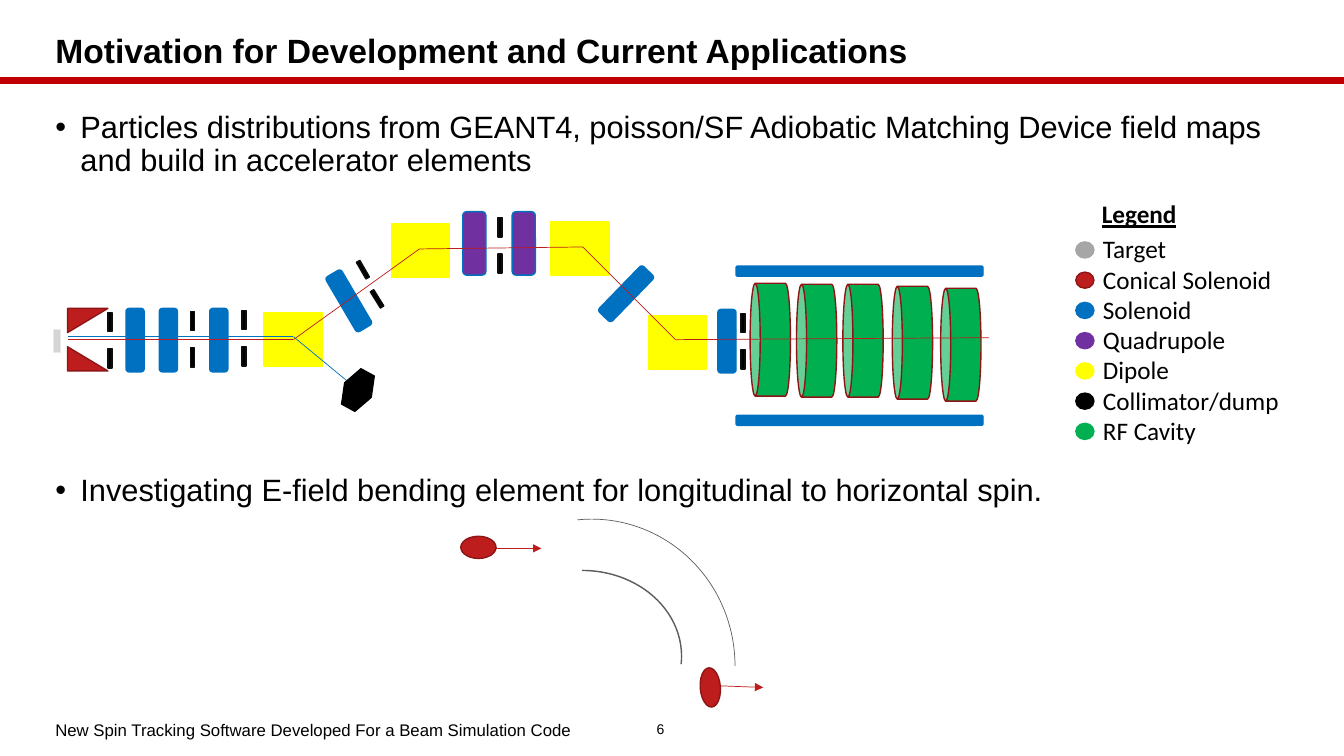
import pptx
import pptx.util
import pptx.oxml
import pptx.oxml.ns
from pptx.dml.color import RGBColor
from pptx.enum.shapes import MSO_CONNECTOR, MSO_SHAPE
from pptx.enum.text import MSO_ANCHOR, PP_ALIGN
from pptx.util import Inches

BLACK = RGBColor(0, 0, 0)
INK = RGBColor(0x0D, 0x0D, 0x0D)
WHITE = RGBColor(255, 255, 255)
RULE = RGBColor(0xC0, 0, 0)
RED = RGBColor(0xBE, 0x1D, 0x1D)
DARK = RGBColor(0x8D, 0x15, 0x15)
BLUE = RGBColor(0, 0x70, 0xC0)
PURPLE = RGBColor(0x70, 0x30, 0xA0)
YELLOW = RGBColor(255, 255, 0)
GREEN = RGBColor(0, 0xB0, 0x50)
GRAY = RGBColor(0xA6, 0xA6, 0xA6)
PALE = RGBColor(0xD5, 0xD5, 0xD5)
MIST = RGBColor(0xEA, 0xEA, 0xEA)
EDGE = RGBColor(0x5E, 0x5E, 0x5E)

TITLE = {"name": "Arial", "size": pptx.util.Pt(24), "bold": True}
BODY = {"name": "Arial", "size": pptx.util.Pt(22)}
FOOT = {"name": "Arial", "size": pptx.util.Pt(12)}
PAGE = {"name": "Arial", "size": pptx.util.Pt(10)}
KEY = {"name": "Calibri", "size": pptx.util.Pt(18)}
HEAD = {**KEY, "bold": True, "underline": True}

LEGEND = [
    ("Target", GRAY, GRAY),
    ("Conical Solenoid", RED, DARK),
    ("Solenoid", BLUE, BLUE),
    ("Quadrupole", PURPLE, PURPLE),
    ("Dipole", YELLOW, YELLOW),
    ("Collimator/dump", BLACK, BLACK),
    ("RF Cavity", GREEN, GREEN),
]


def tag(parent, name, **attrs):
    node = pptx.oxml.parse_xml(
        f'<a:{name} {pptx.oxml.ns.nsdecls("a")}/>')
    for key, value in attrs.items():
        node.set(key, value)
    parent.append(node)


def fill_text(frame, lines, form, anchor=MSO_ANCHOR.TOP,
              align=PP_ALIGN.LEFT, space=1.0, bullet=False):
    frame.word_wrap = True
    frame.vertical_anchor = anchor
    for i, line in enumerate(lines):
        para = frame.add_paragraph() if i else frame.paragraphs[0]
        para.alignment = align
        para.line_spacing = space
        if bullet:
            props = para._p.get_or_add_pPr()
            props.set("marL", str(Inches(0.25)))
            props.set("indent", str(Inches(-0.25)))
            tag(props, "buFont", typeface="Arial")
            tag(props, "buChar", char="•")
        run = para.add_run()
        run.text = line
        for key, value in form.items():
            setattr(run.font, key, value)
        run.font.color.rgb = BLACK


def text(slide, box, lines, form, **opts):
    shape = slide.shapes.add_textbox(*map(Inches, box))
    fill_text(shape.text_frame, lines, form, **opts)


def shape(slide, kind, box, fill, edge, turn=0, width=1, adjust=()):
    item = slide.shapes.add_shape(kind, *map(Inches, box))
    item.shadow.inherit = False
    item.rotation = turn
    if fill is None:
        item.fill.background()
    else:
        item.fill.solid()
        item.fill.fore_color.rgb = fill
    item.line.color.rgb = edge
    item.line.width = pptx.util.Pt(width)
    for i, value in enumerate(adjust):
        item.adjustments[i] = value


def line(slide, ends, color, width=0.5, arrow=False):
    item = slide.shapes.add_connector(
        MSO_CONNECTOR.STRAIGHT, *map(Inches, ends))
    item.line.color.rgb = color
    item.line.width = pptx.util.Pt(width)
    if arrow:
        tag(item.line._get_or_add_ln(), "tailEnd", type="triangle")
    tag(item._element.spPr, "effectLst")


def magnet(slide, x, y, fill=BLUE, wide=0.18, turn=0):
    shape(slide, MSO_SHAPE.ROUNDED_RECTANGLE, (x, y, wide, 0.63),
          fill, BLUE, turn)


def slit(slide, x, y, turn=0):
    shape(slide, MSO_SHAPE.RECTANGLE, (x, y, 0.04, 0.19), BLACK, INK, turn)


def beamline(slide):
    # Target and conical solenoid; the upper half is turned upright
    shape(slide, MSO_SHAPE.RECTANGLE, (0.53, 3.27, 0.07, 0.23), PALE, MIST)
    shape(slide, MSO_SHAPE.RIGHT_TRIANGLE, (0.75, 2.98, 0.24, 0.4),
          RED, DARK, 90)
    shape(slide, MSO_SHAPE.RIGHT_TRIANGLE, (0.67, 3.44, 0.4, 0.24), RED, DARK)

    # Solenoids and quadrupoles
    for x, y, turn in [(1.25, 3.06, 0), (1.58, 3.06, 0), (2.08, 3.06, 0),
                       (3.37, 2.67, 329.6), (6.12, 2.6, 44.2),
                       (7.12, 3.07, 0)]:
        magnet(slide, x, y, turn=turn)
    for x in (4.59, 5.08):
        magnet(slide, x, 2.1, PURPLE, 0.23)

    # Collimators
    for x, y in [(1.07, 3.1), (1.89, 3.09), (2.4, 3.08),
                 (4.94, 2.16), (7.35, 3.11)]:
        for gap in (0, 0.36):
            slit(slide, x, y + gap)
    slit(slide, 3.58, 2.58, 330)
    slit(slide, 3.72, 2.87, 328)

    # Dipoles
    for x, y in [(2.62, 3.1), (3.88, 2.22), (5.46, 2.2), (6.43, 3.13)]:
        shape(slide, MSO_SHAPE.RECTANGLE, (x, y, 0.58, 0.53), YELLOW, YELLOW)

    # Radio-frequency cavities inside the long solenoid
    for x, y in [(7.08, 3.17), (7.54, 3.18), (8, 3.18),
                 (8.49, 3.2), (8.97, 3.22)]:
        shape(slide, MSO_SHAPE.CAN, (x, y, 1.12, 0.4), GREEN, DARK, 270)
    for y in (2.64, 4.12):
        shape(slide, MSO_SHAPE.ROUNDED_RECTANGLE, (7.3, y, 2.45, 0.1),
              BLUE, BLUE)

    # Beam paths and dump
    path = [(0.67, 3.37), (2.91, 3.37), (4.16, 2.47),
            (5.78, 2.45), (6.7, 3.37), (9.81, 3.35)]
    stray = [(0.67, 3.34), (2.91, 3.34), (3.48, 3.81)]
    for points, color in [(path, RED), (stray, BLUE)]:
        for start, end in zip(points, points[1:]):
            line(slide, start + end, color)
    shape(slide, MSO_SHAPE.HEXAGON, (3.4, 3.67, 0.3, 0.4),
          BLACK, BLACK, 28.7)


def legend(slide):
    text(slide, (10.83, 1.92, 1.2, 0.4), ["Legend"], HEAD)
    for i, (name, fill, edge) in enumerate(LEGEND):
        shape(slide, MSO_SHAPE.OVAL, (10.67, 2.4 + 0.3 * i, 0.18, 0.16),
              fill, edge)
    text(slide, (10.84, 2.27, 2.2, 2.22), [row[0] for row in LEGEND], KEY)


def bend(slide):
    # Curved electrodes
    shape(slide, MSO_SHAPE.ARC, (4.45, 5.15, 2.84, 2.91), None, EDGE,
          width=0.5, adjust=(158.59, 0))
    shape(slide, MSO_SHAPE.BLOCK_ARC, (4.79, 5.66, 1.97, 1.7), RED, EDGE,
          adjust=(162.13, 2.64, 0))
    # Particles with their spin arrows
    line(slide, (4.57, 5.44, 5.37, 5.44), RED, arrow=True)
    line(slide, (7.03, 6.8, 7.57, 6.82), RED, arrow=True)
    shape(slide, MSO_SHAPE.OVAL, (4.57, 5.32, 0.35, 0.22), RED, DARK)
    shape(slide, MSO_SHAPE.OVAL, (6.85, 6.72, 0.39, 0.2), RED, DARK, 85.8)


def main():
    deck = pptx.Presentation()
    deck.slide_width, deck.slide_height = Inches(13.33), Inches(7.5)
    slide = deck.slides.add_slide(deck.slide_layouts[5])
    slide.background.fill.solid()
    slide.background.fill.fore_color.rgb = WHITE

    # Title and rule
    line(slide, (0, 0.8, 13.33, 0.8), RULE, 4.5)
    title = slide.shapes.title
    place = {"left": 0.45, "top": 0.26, "width": 12.34, "height": 0.53}
    for key, value in place.items():
        setattr(title, key, Inches(value))
    fill_text(title.text_frame,
              ["Motivation for Development and Current Applications"],
              TITLE, anchor=MSO_ANCHOR.MIDDLE, space=0.9)

    # Bullets
    for y, words in [
        (1.06, "Particles distributions from GEANT4, poisson/SF Adiobatic "
               "Matching Device field maps and build in accelerator elements"),
        (4.66, "Investigating E-field bending element for longitudinal to "
               "horizontal spin."),
    ]:
        text(slide, (0.45, y, 12.34, 0.8), [words], BODY,
             space=0.9, bullet=True)

    # Diagrams
    bend(slide)
    beamline(slide)
    legend(slide)

    # Footer
    text(slide, (0.45, 7.07, 5.71, 0.34),
         ["New Spin Tracking Software Developed For a Beam Simulation Code"],
         FOOT, anchor=MSO_ANCHOR.MIDDLE)
    text(slide, (6.16, 7.07, 0.78, 0.33), ["6"], PAGE,
         anchor=MSO_ANCHOR.MIDDLE, align=PP_ALIGN.CENTER)
    deck.save("out.pptx")


if __name__ == "__main__":
    main()
